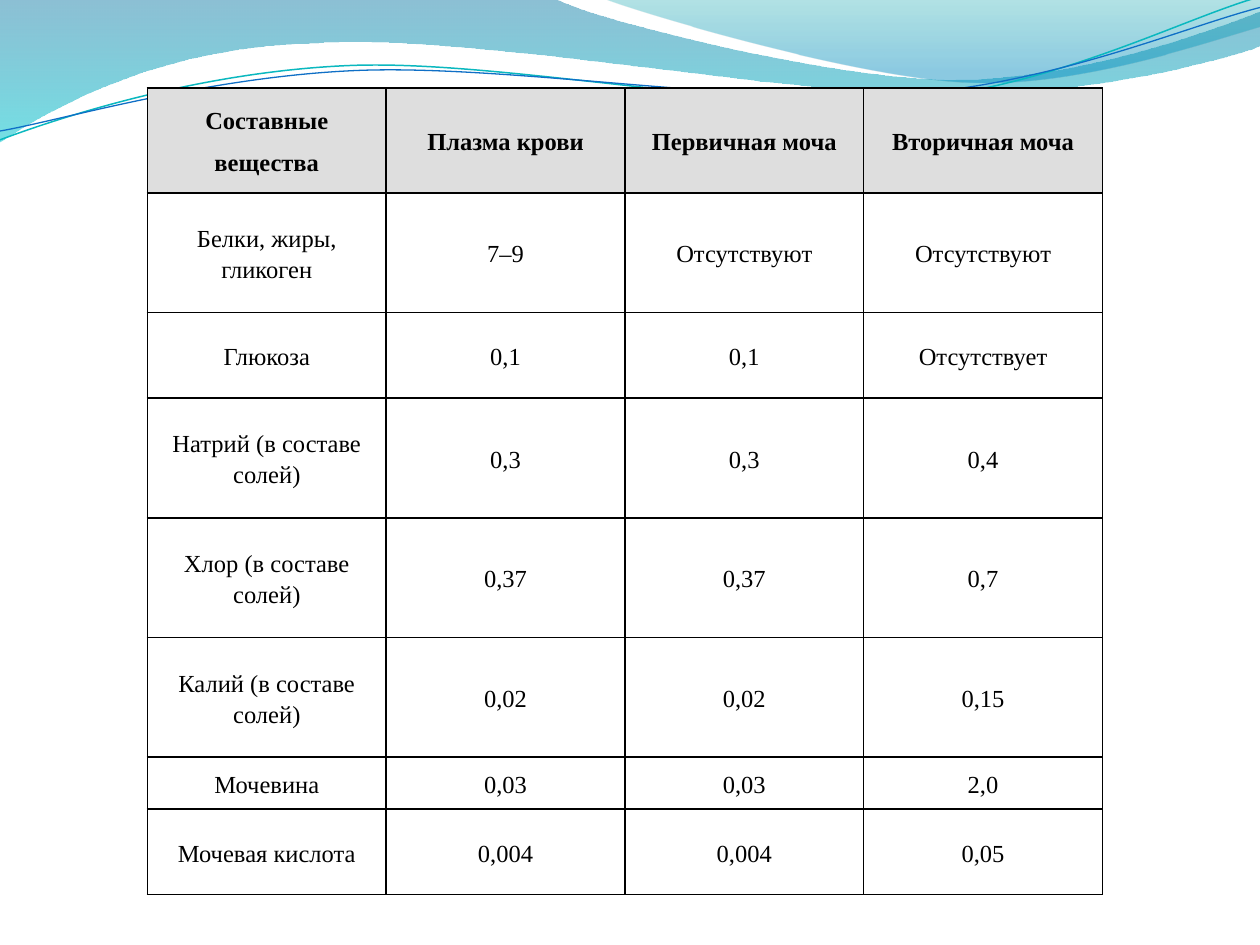
from math import cos, radians, sin
from pptx import Presentation
from pptx.dml.color import RGBColor
from pptx.enum.text import MSO_ANCHOR, PP_ALIGN
from pptx.oxml import parse_xml
from pptx.oxml.ns import nsdecls, qn
from pptx.util import Inches, Pt
from lxml.etree import SubElement

HEADER = ["Составные\nвещества", "Плазма крови", "Первичная моча", "Вторичная моча"]
ROWS = [
    ["Белки, жиры,\nгликоген", "7–9", "Отсутствуют", "Отсутствуют"],
    ["Глюкоза", "0,1", "0,1", "Отсутствует"],
    ["Натрий (в составе\nсолей)", "0,3", "0,3", "0,4"],
    ["Хлор (в составе\nсолей)", "0,37", "0,37", "0,7"],
    ["Калий (в составе\nсолей)", "0,02", "0,02", "0,15"],
    ["Мочевина", "0,03", "0,03", "2,0"],
    ["Мочевая кислота", "0,004", "0,004", "0,05"],
]
HEIGHTS = [0.83, 0.95, 0.68, 0.95, 0.95, 0.95, 0.41, 0.68]

BACK_WAVE = [
    (0, 0), (4.4, -0.01), (4.76, 0.17, 6.64, 0.63, 7.58, 0.63),
    (8.53, 0.63, 9.58, 0.26, 10, 0.09), (10.01, 0.36),
    (9.83, 0.44, 8.7, 0.76, 7.46, 0.75), (6.22, 0.75, 3.82, 0.28, 2.57, 0.34),
    (1.29, 0.36, 0.46, 0.83, -0.01, 1.13), (0, 0),
]
FRONT_WAVE = [
    (4.79, -0.01), (5.09, 0.11, 6.82, 0.62, 7.69, 0.65),
    (8.56, 0.69, 9.61, 0.32, 10, 0.21), (10, 0), (4.79, -0.01),
]
TEAL_CURVE = [
    (0, 1.11), (0.48, 0.93, 1.58, 0.57, 2.77, 0.52),
    (3.95, 0.47, 5.93, 0.89, 7.13, 0.8), (8.33, 0.71, 9.38, 0.15, 9.98, -0.02),
]
BLUE_CURVE = [
    (0, 1.04), (0.47, 0.96, 1.64, 0.61, 2.83, 0.56),
    (4.03, 0.51, 5.97, 0.84, 7.17, 0.75), (8.36, 0.67, 9.41, 0.21, 10, 0.06),
]


def color(value):
    return RGBColor.from_string(value)


def turn(point, center, degrees):
    dx, dy = point[0] - center[0], point[1] - center[1]
    c, n = cos(radians(degrees)), sin(radians(degrees))
    return center[0] + dx * c - dy * n, center[1] + dx * n + dy * c


class SlideBuilder:
    font = "Times New Roman"
    size = 14
    ink = "000000"
    header_fill = "DEDEDE"
    inset = 0.04
    tilt = 2.7

    def __init__(self, s):
        self.s = s

    def outline(self, segments, close, center=(0, 0), tilt=0):
        points = [turn(seg[i:i + 2], center, tilt)
                  for seg in segments for i in range(0, len(seg), 2)]
        (x, y), *rest = [(Inches(px), Inches(py)) for px, py in points]
        builder = self.s.shapes.build_freeform(x, y)
        builder.add_line_segments(rest, close=close)
        sp = builder.convert_to_shape()
        sp.shadow.inherit = False
        sp.rotation = -tilt % 360
        lines = iter(list(sp.element.iter(qn("a:lnTo"))))
        for segment in segments[1:]:
            line = next(lines)
            if len(segment) == 6:
                line.tag = qn("a:cubicBezTo")
                for extra in (next(lines), next(lines)):
                    line.append(extra[0])
                    extra.getparent().remove(extra)
        return sp

    def wave(self, segments, stops):
        sp = self.outline(segments, True)
        sp.line.fill.background()
        sp.fill.gradient()
        sp.fill.gradient_angle = 270
        for stop, (position, value, _) in zip(sp.fill.gradient_stops, stops):
            stop.position = position
            stop.color.rgb = color(value)
        for rgb, (_, _, opacity) in zip(sp.element.spPr.iter(qn("a:srgbClr")), stops):
            SubElement(rgb, qn("a:alpha"), val=str(opacity * 1000))

    def curve(self, segments, center, value, width):
        sp = self.outline(segments, False, center, self.tilt)
        sp.fill.background()
        sp.line.color.rgb = color(value)
        sp.line.width = Pt(width)

    def cell(self, cell, text, header):
        cell.vertical_anchor = MSO_ANCHOR.MIDDLE
        cell.margin_left = cell.margin_right = Inches(self.inset)
        cell.margin_top = cell.margin_bottom = Inches(self.inset)
        for side in "LRTB":
            cell._tc.get_or_add_tcPr().append(parse_xml(
                f'<a:ln{side} {nsdecls("a")} w="{Pt(1)}"><a:solidFill>'
                f'<a:srgbClr val="{self.ink}"/></a:solidFill></a:ln{side}>'))
        if header:
            cell.fill.solid()
            cell.fill.fore_color.rgb = color(self.header_fill)
        else:
            cell.fill.background()
        tf = cell.text_frame
        tf.text = text
        for i, p in enumerate(tf.paragraphs):
            p.alignment = PP_ALIGN.CENTER
            p.line_spacing = 1.15
            p.space_before = Pt(3.8 if i == 0 and not header else 0)
            p.space_after = Pt(6 if i == 0 and header else 0)
            p.font.name = self.font
            p.font.size = Pt(self.size)
            p.font.bold = header
            p.font.color.rgb = color(self.ink)

    def table(self, left, top, width, heights, rows):
        columns = len(rows[0])
        table = self.s.shapes.add_table(
            len(rows), columns, Inches(left), Inches(top),
            Inches(width), Inches(sum(heights))).table
        table.horz_banding = False
        for column in table.columns:
            column.width = Inches(width / columns)
        for r, (height, row) in enumerate(zip(heights, rows)):
            table.rows[r].height = Inches(height)
            for c, text in enumerate(row):
                self.cell(table.cell(r, c), text, r == 0)


def main():
    prs = Presentation()
    prs.slide_width, prs.slide_height = Inches(10), Inches(7.5)
    slide = SlideBuilder(prs.slides.add_slide(prs.slide_layouts[6]))
    slide.wave(BACK_WAVE, [(0, "0074A1", 45), (1, "00C6CF", 55)])
    slide.wave(FRONT_WAVE, [(0, "00A1A9", 30), (0.8, "008BBF", 45)])
    slide.curve(TEAL_CURVE, (4.99, 0.58), "0AB8BF", 0.85)
    slide.curve(BLUE_CURVE, (5, 0.59), "0F6FC6", 0.75)
    slide.table(1.17, 0.7, 7.58, HEIGHTS, [HEADER] + ROWS)
    prs.save("out.pptx")


if __name__ == "__main__":
    main()
